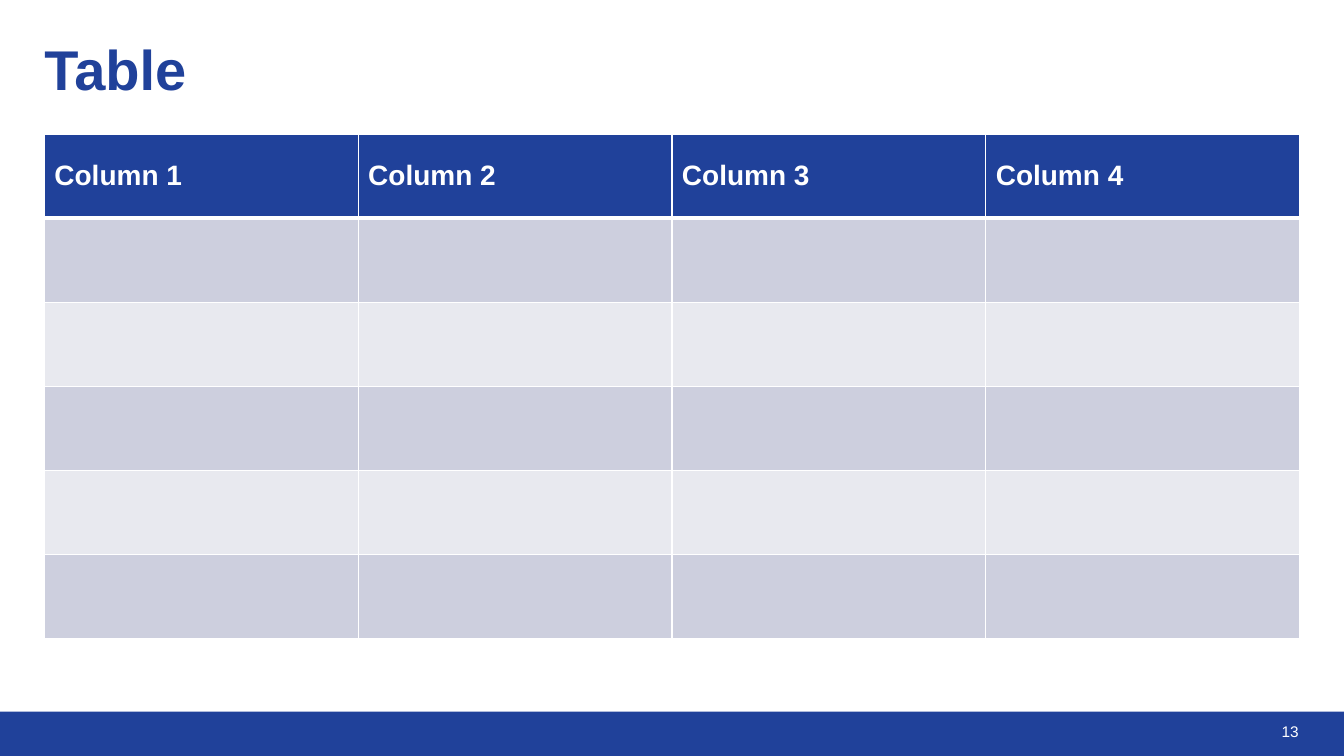
from lxml.etree import SubElement
from pptx import Presentation
from pptx.dml.color import RGBColor
from pptx.enum.shapes import MSO_SHAPE
from pptx.enum.text import MSO_ANCHOR, PP_ALIGN
from pptx.oxml.ns import qn
from pptx.util import Pt

TITLE = "Table"
HEADINGS = ["Column 1", "Column 2", "Column 3", "Column 4"]
BODY_ROWS = 5
PAGE_NUMBER = "13"

BLUE = RGBColor(0x20, 0x41, 0x9A)
WHITE = RGBColor(0xFF, 0xFF, 0xFF)
BANDS = [RGBColor(0xCD, 0xCF, 0xDE), RGBColor(0xE8, 0xE9, 0xEF)]

SLIDE_WIDTH, SLIDE_HEIGHT = 960.48, 540
MARGIN = 31.7
CONTENT_WIDTH = SLIDE_WIDTH - 2 * MARGIN
TABLE_TOP, ROW_HEIGHT = 95.8, 60.1
FOOTER_HEIGHT = 31.7
RULE, HEADER_RULE = 1, 3


def write(frame, text, size, color, bold=False, align=PP_ALIGN.LEFT):
    frame.word_wrap = True
    paragraph = frame.paragraphs[0]
    paragraph.alignment = align
    run = paragraph.add_run()
    run.text = text
    run.font.name = "Arial"
    run.font.size = Pt(size)
    run.font.bold = bold
    run.font.color.rgb = color


def add_label(slide, box, text, inset, **text_format):
    label = slide.shapes.add_textbox(*map(Pt, box))
    frame = label.text_frame
    frame.vertical_anchor = MSO_ANCHOR.MIDDLE
    frame.margin_left = frame.margin_right = Pt(inset)
    frame.margin_top = frame.margin_bottom = 0
    write(frame, text, **text_format)


def set_borders(cell, top, bottom):
    """Draw white cell borders; call before filling, as the schema puts lines first."""
    properties = cell._tc.get_or_add_tcPr()
    for side, width in (("L", RULE), ("R", RULE), ("T", top), ("B", bottom)):
        line = SubElement(properties, qn(f"a:ln{side}"), w=str(Pt(width)))
        fill = SubElement(line, qn("a:solidFill"))
        SubElement(fill, qn("a:srgbClr"), val=str(WHITE))


def add_grid(slide):
    row_count = BODY_ROWS + 1
    table = slide.shapes.add_table(
        row_count, len(HEADINGS), Pt(MARGIN), Pt(TABLE_TOP),
        Pt(CONTENT_WIDTH), Pt(ROW_HEIGHT * row_count)).table
    for r in range(row_count):
        for c, heading in enumerate(HEADINGS):
            cell = table.cell(r, c)
            set_borders(cell, top=HEADER_RULE if r == 1 else RULE,
                        bottom=HEADER_RULE if r == 0 else RULE)
            cell.fill.solid()
            cell.fill.fore_color.rgb = BANDS[(r - 1) % 2] if r else BLUE
            cell.vertical_anchor = MSO_ANCHOR.MIDDLE
            if r == 0:
                write(cell.text_frame, heading, size=20, color=WHITE, bold=True)


def add_footer(slide):
    top = SLIDE_HEIGHT - FOOTER_HEIGHT
    bar = slide.shapes.add_shape(
        MSO_SHAPE.RECTANGLE, 0, Pt(top), Pt(SLIDE_WIDTH), Pt(FOOTER_HEIGHT))
    bar.shadow.inherit = False
    bar.fill.solid()
    bar.fill.fore_color.rgb = BLUE
    bar.line.fill.background()
    add_label(slide, (719.3, 517, 216, 10.8), PAGE_NUMBER, inset=7.2,
              size=11, color=WHITE, align=PP_ALIGN.RIGHT)


def main():
    presentation = Presentation()
    presentation.slide_width = Pt(SLIDE_WIDTH)
    presentation.slide_height = Pt(SLIDE_HEIGHT)
    slide = presentation.slides.add_slide(presentation.slide_layouts[6])
    add_label(slide, (MARGIN, 31.7, CONTENT_WIDTH, 33.8), TITLE, inset=0,
              size=40, color=BLUE, bold=True)
    add_grid(slide)
    add_footer(slide)
    presentation.save("out.pptx")


if __name__ == "__main__":
    main()
